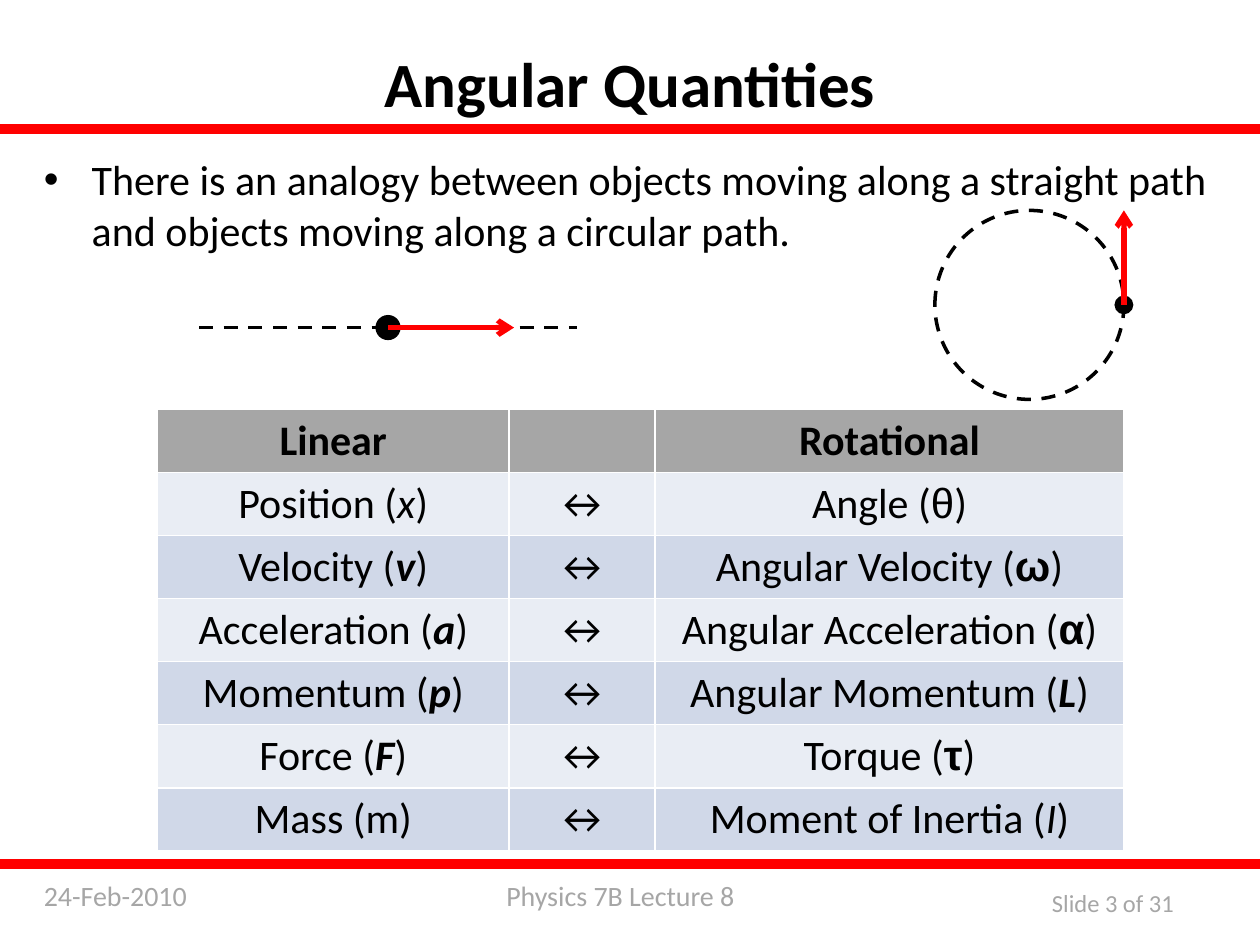
"""Build the Angular Quantities slide."""
import pptx
import pptx.dml.color
import pptx.enum.dml
import pptx.enum.shapes
import pptx.enum.text
import pptx.oxml
import pptx.oxml.ns
import pptx.util
from lxml import etree

Inches = pptx.util.Inches
Pt = pptx.util.Pt
RGBColor = pptx.dml.color.RGBColor
SHAPE = pptx.enum.shapes.MSO_SHAPE
ALIGN = pptx.enum.text.PP_ALIGN
ANCHOR = pptx.enum.text.MSO_ANCHOR
DASH = pptx.enum.dml.MSO_LINE.DASH
qn = pptx.oxml.ns.qn

BLACK = RGBColor(0, 0, 0)
RED = RGBColor(0xFF, 0, 0)
GRAY = RGBColor(0xA6, 0xA6, 0xA6)
BANDS = RGBColor(0xE9, 0xED, 0xF4), RGBColor(0xD0, 0xD8, 0xE8)

VECTOR = {"bold": True, "italic": True}
SCALAR = {"italic": True}
GREEK = {"name": "Arial"}
GREEK_VECTOR = {"name": "Arial", "bold": True}

QUANTITIES = [
    (("Position", "x", SCALAR), ("Angle", "θ", GREEK)),
    (("Velocity", "v", VECTOR), ("Angular Velocity", "ω", GREEK_VECTOR)),
    (("Acceleration", "a", VECTOR), ("Angular Acceleration", "α", GREEK_VECTOR)),
    (("Momentum", "p", VECTOR), ("Angular Momentum", "L", VECTOR)),
    (("Force", "F", VECTOR), ("Torque", "τ", GREEK_VECTOR)),
    (("Mass", "m", {}), ("Moment of Inertia", "I", SCALAR)),
]


class SlideBuilder:
    """Hold the style and the current slide."""

    font = "Calibri"
    size = 24

    def __init__(self, prs):
        self.s = prs.slides.add_slide(prs.slide_layouts[5])

    def style(self, p, size=size, color=BLACK, bold=False, align=None):
        p.font.name = self.font
        p.font.size = Pt(size)
        p.font.color.rgb = color
        p.font.bold = bold
        p.alignment = align

    def title(self, text, x, y, w, h):
        sp = self.s.shapes.title
        sp.left, sp.top, sp.width, sp.height = map(Inches, (x, y, w, h))
        tf = sp.text_frame
        tf.text = text
        tf.auto_size = pptx.enum.text.MSO_AUTO_SIZE.NONE
        tf.vertical_anchor = ANCHOR.TOP
        self.style(tf.paragraphs[0], 36, bold=True, align=ALIGN.CENTER)

    def text(self, text, x, y, w, h, wrap=True, **style):
        sp = self.s.shapes.add_textbox(*map(Inches, (x, y, w, h)))
        tf = sp.text_frame
        tf.word_wrap = wrap
        p = tf.paragraphs[0]
        p.text = text
        self.style(p, **style)
        return p

    def bullet(self, text, x, y, w, h):
        p = self.text(text, x, y, w, h)
        p.space_before = Pt(0.2 * self.size)
        pPr = p._p.get_or_add_pPr()
        pPr.set("marL", str(Inches(0.38)))
        pPr.set("indent", str(Inches(-0.38)))
        font = etree.Element(qn("a:buFont"), typeface="Arial")
        char = etree.Element(qn("a:buChar"), char="•")
        pPr.find(qn("a:spcBef")).addnext(font)
        font.addnext(char)

    def shape(self, kind, x, y, w, h, fill=None, line=None, dash=None, parent=None):
        sp = (parent or self.s).shapes.add_shape(kind, *map(Inches, (x, y, w, h)))
        sp.shadow.inherit = False
        if fill is None:
            sp.fill.background()
        else:
            sp.fill.solid()
            sp.fill.fore_color.rgb = fill
        if line is None:
            sp.line.fill.background()
        else:
            sp.line.color.rgb = line
            sp.line.width = Pt(2)
            sp.line.dash_style = dash

    def dot(self, x, y, d, parent):
        self.shape(SHAPE.OVAL, x - d / 2, y - d / 2, d, d, BLACK, parent=parent)

    def line(self, x1, y1, x2, y2, color, width, parent, dash=None, arrow=False):
        kind = pptx.enum.shapes.MSO_CONNECTOR.STRAIGHT
        c = parent.shapes.add_connector(kind, *map(Inches, (x1, y1, x2, y2)))
        c.line.color.rgb = color
        c.line.width = Pt(width)
        c.line.dash_style = dash
        if arrow:
            etree.SubElement(c.line._get_or_add_ln(), qn("a:tailEnd"), type="arrow")
        etree.SubElement(c._element.spPr, qn("a:effectLst"))

    def cell(self, cell, parts, fill, bold=False):
        cell.fill.solid()
        cell.fill.fore_color.rgb = fill
        cell.vertical_anchor = ANCHOR.MIDDLE
        p = cell.text_frame.paragraphs[0]
        self.style(p, bold=bold, align=ALIGN.CENTER)
        for text, font in parts:
            r = p.add_run()
            r.text = text
            for key, value in font.items():
                setattr(r.font, key, value)
        tcPr = cell._tc.get_or_add_tcPr()
        for i, side in enumerate(("lnL", "lnR", "lnT", "lnB")):
            ln = etree.Element(qn(f"a:{side}"), w=str(Pt(1)))
            solid = etree.SubElement(ln, qn("a:solidFill"))
            etree.SubElement(solid, qn("a:srgbClr"), val="FFFFFF")
            tcPr.insert(i, ln)

    def table(self, x, y, widths, row_height, headers, quantities):
        n = len(quantities) + 1
        box = map(Inches, (x, y, sum(widths), n * row_height))
        table = self.s.shapes.add_table(n, len(widths), *box).table
        for column, width in zip(table.columns, widths):
            column.width = Inches(width)
        for i, header in enumerate(headers):
            self.cell(table.cell(0, i), [(header, {})] if header else [], GRAY, bold=True)
        for i, pair in enumerate(quantities):
            linear, rotational = (
                [(f"{name} (", {}), (symbol, font), (")", {})]
                for name, symbol, font in pair
            )
            for j, parts in enumerate((linear, [("↔", {})], rotational)):
                self.cell(table.cell(i + 1, j), parts, BANDS[i % 2])


def main():
    prs = pptx.Presentation()
    prs.slide_width, prs.slide_height = Inches(10), Inches(7.5)
    b = SlideBuilder(prs)

    b.text("Physics 7B Lecture 8", 3.92, 6.92, 2.04, 0.37, wrap=False, size=16, color=GRAY)
    b.text("24-Feb-2010", 0.25, 6.92, 1.67, 0.37, size=16, color=GRAY)
    b.text("Slide 3 of 31", 8.25, 7, 1.31, 0.34, wrap=False, size=14, color=GRAY)
    for y in (1, 6.83):
        b.shape(SHAPE.RECTANGLE, 0, y, 10, 0.05, RED, RED)

    b.title("Angular Quantities", 0.5, 0.3, 9, 1.25)
    b.bullet("There is an analogy between objects moving along a straight path "
             "and objects moving along a circular path.", 0.25, 1.17, 9.5, 2.75)

    straight = b.s.shapes.add_group_shape()
    b.line(1.58, 2.6, 4.58, 2.6, BLACK, 2, straight, dash=DASH)
    b.dot(3.08, 2.6, 0.2, straight)
    b.line(3.08, 2.6, 4.08, 2.6, RED, 3, straight, arrow=True)

    circular = b.s.shapes.add_group_shape()
    b.shape(SHAPE.OVAL, 7.42, 1.67, 1.5, 1.5, line=BLACK, dash=DASH, parent=circular)
    b.dot(8.92, 2.42, 0.15, circular)
    b.line(8.92, 2.42, 8.92, 1.67, RED, 3, circular, arrow=True)

    b.table(1.25, 3.25, (2.79, 1.16, 3.72), 0.5, ("Linear", "", "Rotational"), QUANTITIES)
    prs.save("out.pptx")


if __name__ == "__main__":
    main()
